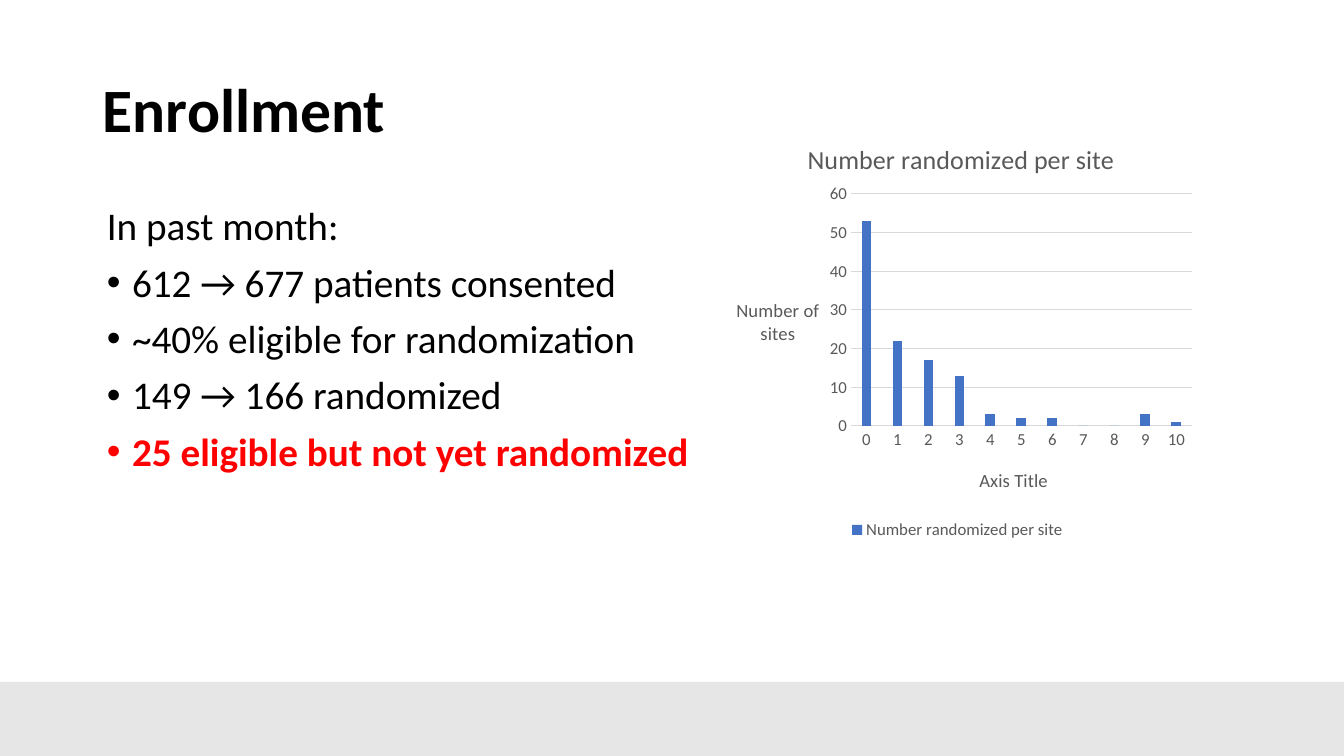
import pptx
import pptx.chart.data
import pptx.dml.color
import pptx.enum.chart
import pptx.enum.shapes
import pptx.enum.text
import pptx.oxml
import pptx.oxml.ns
import pptx.util

PX = 914400 / 100.8
FONT = "Calibri"
COLORS = {"text": "000000", "alert": "FF0000", "band": "E7E6E6",
          "label": "595959", "grid": "D9D9D9", "bar": "4472C4"}
CHART_BOX = (713, 113, 489, 431)
qn = pptx.oxml.ns.qn


def style(font, size, color, bold=False):
    font.name = FONT
    font.size = pptx.util.Pt(size)
    font.bold = bold
    font.color.rgb = pptx.dml.color.RGBColor.from_string(COLORS[color])


def place(element, index, x, y, w=None, h=None):
    """Fix a chart part at a slide position given in px."""
    left, top, width, height = CHART_BOX
    values = {"x": (x - left) / width, "y": (y - top) / height}
    if w:
        values.update(w=w / width, h=h / height)
    target = '<c:layoutTarget val="inner"/>' if w else ""
    modes = "".join(f'<c:{k}Mode val="edge"/>' for k in "xy")
    sizes = "".join(f'<c:{k} val="{v:.4f}"/>' for k, v in values.items())
    for old in element.findall(qn("c:layout")):
        element.remove(old)
    element.insert(index, pptx.oxml.parse_xml(
        f'<c:layout {pptx.oxml.ns.nsdecls("c")}><c:manualLayout>'
        f'{target}{modes}{sizes}</c:manualLayout></c:layout>'))


prs = pptx.Presentation()
prs.slide_width, prs.slide_height = round(1344 * PX), round(756 * PX)
s = prs.slides.add_slide(prs.slide_layouts[6])

# Footer band
band = s.shapes.add_shape(pptx.enum.shapes.MSO_SHAPE.RECTANGLE,
                          *[round(v * PX) for v in (0, 682, 1344, 74)])
band.shadow.inherit = False
band.fill.solid()
band.fill.fore_color.rgb = pptx.dml.color.RGBColor.from_string(COLORS["band"])
band.line.fill.background()

# Title
title = s.shapes.add_textbox(*[round(v * PX) for v in (93, 40, 1159, 146)])
tf = title.text_frame
tf.word_wrap = True
tf.vertical_anchor = pptx.enum.text.MSO_ANCHOR.MIDDLE
tf.text = "Enrollment"
tf.paragraphs[0].line_spacing = 0.9
style(tf.paragraphs[0].runs[0].font, 44, "text", True)

# Monthly progress list
lines = ["In past month:", "612 → 677 patients consented",
         "~40% eligible for randomization", "149 → 166 randomized",
         "25 eligible but not yet randomized"]
body = s.shapes.add_textbox(*[round(v * PX) for v in (97, 202, 1138, 417)])
tf = body.text_frame
tf.word_wrap = True
for i, line in enumerate(lines):
    p = tf.paragraphs[0] if i == 0 else tf.add_paragraph()
    p.text = line
    p.line_spacing = 0.9
    if i:
        p.space_before = pptx.util.Pt(10)
        pPr = p._p.get_or_add_pPr()
        pPr.set("marL", "228600")
        pPr.set("indent", "-228600")
        pPr.append(pptx.oxml.parse_xml(
            f'<a:buFont {pptx.oxml.ns.nsdecls("a")} typeface="Arial"/>'))
        pPr.append(pptx.oxml.parse_xml(
            f'<a:buChar {pptx.oxml.ns.nsdecls("a")} char="•"/>'))
    last = i == len(lines) - 1
    style(p.runs[0].font, 28, "alert" if last else "text", last)

# Column chart
data = pptx.chart.data.CategoryChartData()
data.categories = [str(n) for n in range(11)]
data.add_series("Number randomized per site",
                [53, 22, 17, 13, 3, 2, 2, 0, 0, 3, 1])
chart = s.shapes.add_chart(pptx.enum.chart.XL_CHART_TYPE.COLUMN_CLUSTERED,
                           *[round(v * PX) for v in CHART_BOX], data).chart
style(chart.font, 10, "text")
plot = chart.plots[0]
plot.gap_width, plot.overlap = 219, -27
plot.vary_by_categories = False
bars = plot.series[0].format.fill
bars.solid()
bars.fore_color.rgb = pptx.dml.color.RGBColor.from_string(COLORS["bar"])
place(chart._chartSpace.chart.plotArea, 0, 851, 194, 341, 232)

# Axes
cat, val = chart.category_axis, chart.value_axis
for axis in (cat, val):
    axis.major_tick_mark = pptx.enum.chart.XL_TICK_MARK.NONE
    axis.minor_tick_mark = pptx.enum.chart.XL_TICK_MARK.NONE
    style(axis.tick_labels.font, 12, "label")
val.minimum_scale, val.maximum_scale, val.major_unit = 0, 60, 10
val.has_major_gridlines = True
val.format.line.fill.background()
for line in (cat.format.line, val.major_gridlines.format.line):
    line.color.rgb = pptx.dml.color.RGBColor.from_string(COLORS["grid"])
    line.width = pptx.util.Pt(0.75)

# Chart and axis titles
for part, text, size, x, y in [
        (chart.chart_title, "Number randomized per site", 18.6, 803, 136),
        (cat.axis_title, "Axis Title", 13.3, 976, 464),
        (val.axis_title, "Number of sites", 13.3, 733, 294)]:
    part.text_frame.text = text
    style(part.text_frame.paragraphs[0].runs[0].font, size, "label")
    place(part._element, 1, x, y)
bodyPr = val.axis_title.text_frame._txBody.find(qn("a:bodyPr"))
bodyPr.set("rot", "0")
bodyPr.set("vert", "horz")

# Legend
chart.has_legend = True
chart.legend.position = pptx.enum.chart.XL_LEGEND_POSITION.BOTTOM
chart.legend.include_in_layout = False
style(chart.legend.font, 12, "label")

prs.save("out.pptx")
